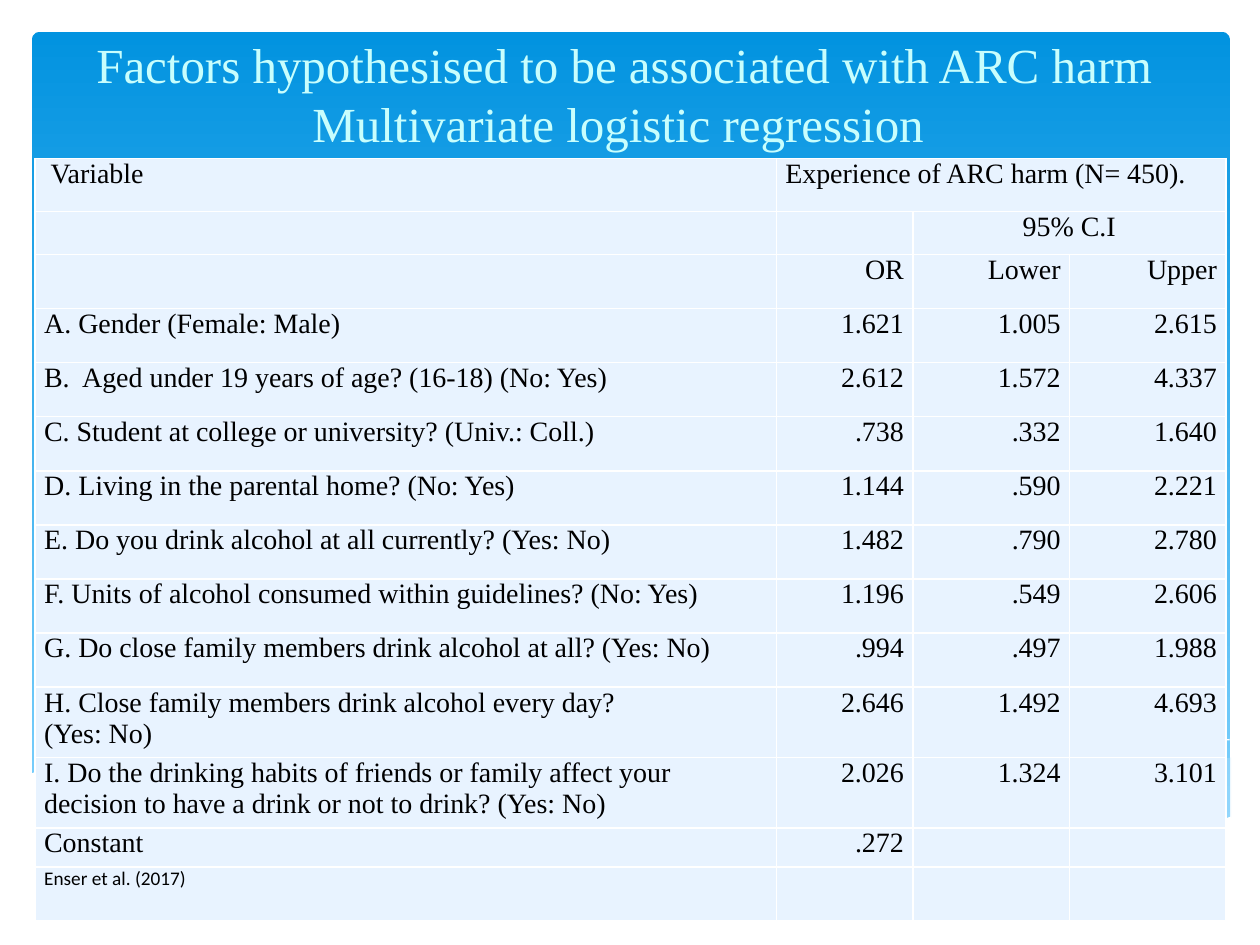
from lxml import etree
from pptx import Presentation
from pptx.dml.color import RGBColor
from pptx.enum.shapes import MSO_SHAPE
from pptx.enum.text import MSO_ANCHOR, PP_ALIGN
from pptx.oxml.ns import qn
from pptx.util import Cm, Pt

THEME = {
    "white": "FFFFFF", "black": "000000", "cell": "E8F3FF", "title": "C8FEFD",
    "top": "0293E0", "base": "83D3FE", "wave": "C6E7FC",
    "head": 28, "body": 16, "note": 11,
    "serif": "Times New Roman", "sans": "Calibri",
}

# Content
TITLE = ("Factors hypothesised to be associated with ARC harm "
         "Multivariate logistic regression ")
ROWS = [
    ("\u00a0Variable".replace("\u00a0", " "), "Experience of ARC harm (N= 450).", "", ""),
    ("", "", "95% C.I", ""),
    ("", "OR", "Lower", "Upper"),
    ("A. Gender (Female: Male)", "1.621", "1.005", "2.615"),
    ("B.  Aged under 19 years of age? (16-18) (No: Yes)", "2.612", "1.572", "4.337"),
    ("C. Student at college or university? (Univ.: Coll.)", ".738", ".332", "1.640"),
    ("D. Living in the parental home? (No: Yes)", "1.144", ".590", "2.221"),
    ("E. Do you drink alcohol at all currently? (Yes: No)", "1.482", ".790", "2.780"),
    ("F. Units of alcohol consumed within guidelines? (No: Yes)", "1.196", ".549", "2.606"),
    ("G. Do close family members drink alcohol at all? (Yes: No)", ".994", ".497", "1.988"),
    ("H. Close family members drink alcohol every day?\n(Yes: No)", "2.646", "1.492", "4.693"),
    ("I. Do the drinking habits of friends or family affect your decision "
     "to have a drink or not to drink? (Yes: No)", "2.026", "1.324", "3.101"),
    ("Constant", ".272", "", ""),
    ("Enser et al. (2017)", "", "", ""),
]
SPANS = [((0, 1), (0, 3)), ((1, 2), (1, 3))]
ALIGN = {(0, 1): PP_ALIGN.LEFT, (1, 2): PP_ALIGN.CENTER}

# Sizes in cm
WIDE = [14.94, 2.75, 3.16, 3.15]
TALL = [1.06, 0.87] + [1.09] * 8 + [1.42] * 2 + [0.79, 1.09]

# Waves: points in cm, fill, opacity in percent, closed
WAVES = [
    ([(24.82, 15.27), (23.77, 15.47), (22.66, 15.7), (21.89, 15.88), (20.47, 16.23),
      (19.15, 16.51), (17.96, 16.74), (16.81, 16.94), (18.26, 17.12), (19.56, 17.25),
      (20.7, 17.27), (21.95, 17.2), (23.04, 17.04), (23.98, 16.79), (24.82, 16.48)],
     "wave", 29, True),
    ([(22.71, 17.15), (21.29, 16.94), (19.71, 16.66), (17.96, 16.31), (16, 15.85),
      (14.48, 15.49), (13.08, 15.24), (11.81, 15.06), (10.67, 14.96), (9.65, 14.91),
      (8.76, 14.94), (7.29, 15.06), (8.71, 15.27), (10.29, 15.57), (11.43, 15.85),
      (13.46, 16.31), (15.29, 16.69), (16.92, 16.97), (18.36, 17.17), (19.66, 17.25),
      (21.06, 17.27), (22.05, 17.22)], "wave", 40, True),
    ([(7.87, 15.16), (8.74, 15.01), (9.86, 14.96), (11.46, 14.96), (12.98, 15.09),
      (14.78, 15.29), (16.92, 15.62), (19.33, 16.13), (21.13, 16.56), (23.06, 17.09)],
     None, 100, False),
    ([(15.6, 16.74), (17.09, 16.33), (19.02, 15.88), (20.5, 15.54), (22.02, 15.24),
      (23.5, 15.04), (24.79, 14.91)], None, 100, False),
    ([(0.58, 15.62), (0.91, 15.47), (1.5, 15.27), (2.41, 15.06), (3.35, 14.94),
      (4.5, 14.88), (5.84, 14.91), (7.42, 15.06), (9.27, 15.34), (11.35, 15.8),
      (14.1, 16.41), (16.46, 16.87), (18.42, 17.12), (20.14, 17.25), (21.59, 17.22),
      (22.83, 17.04), (23.88, 16.79), (24.82, 16.46), (24.82, 18.57), (0.58, 18.57)],
     "white", 100, True),
]


def tint(name):
    return RGBColor.from_string(THEME[name])


def put(obj, **vals):
    for key, val in vals.items():
        setattr(obj, key, val)


def style(run, size, face, ink):
    put(run.font, size=Pt(THEME[size]), name=THEME[face], bold=False)
    run.font.color.rgb = tint(ink)


def panel(slide):
    box = slide.shapes.add_shape(MSO_SHAPE.ROUNDED_RECTANGLE,
                                 Cm(0.64), Cm(0.64), Cm(24.16), Cm(16.76))
    box.adjustments[0] = 0.01
    box.shadow.inherit = False
    box.line.fill.background()
    box.fill.gradient()
    box.fill.gradient_angle = 270
    for stop, name, pos in zip(box.fill.gradient_stops, ("top", "base"), (0, 1)):
        stop.color.rgb = tint(name)
        stop.position = pos


def wave(slide, dots, name, alpha, shut):
    dots = [(Cm(x), Cm(y)) for x, y in dots]
    pen = slide.shapes.build_freeform(*dots[0])
    pen.add_line_segments(dots[1:], close=shut)
    shape = pen.convert_to_shape()
    shape.shadow.inherit = False
    if name is None:
        shape.fill.background()
        shape.line.color.rgb = tint("white")
        shape.line.width = Pt(0)
        return
    shape.line.fill.background()
    shape.fill.solid()
    shape.fill.fore_color.rgb = tint(name)
    if alpha < 100:
        clr = shape.element.spPr.find(".//" + qn("a:srgbClr"))
        etree.SubElement(clr, qn("a:alpha"), val=str(alpha * 1000))


def head(slide):
    title = slide.shapes.title
    put(title, left=Cm(0.89), top=Cm(1.12), width=Cm(23.39), height=Cm(2.08))
    slide.shapes.element.append(title.element)  # in front of the panel
    frame = title.text_frame
    put(frame, word_wrap=True, vertical_anchor=MSO_ANCHOR.BOTTOM)
    para = frame.paragraphs[0]
    para.alignment = PP_ALIGN.CENTER
    run = para.add_run()
    run.text = TITLE
    style(run, "head", "serif", "title")


def edge(cell):
    props = cell._tc.get_or_add_tcPr()
    for side in ("lnL", "lnR", "lnT", "lnB"):
        line = etree.SubElement(props, qn("a:" + side), w=str(Pt(1)))
        fill = etree.SubElement(line, qn("a:solidFill"))
        etree.SubElement(fill, qn("a:srgbClr"), val=THEME["white"])


def write(cell, text, align, size, face):
    put(cell, margin_left=Cm(0.18), margin_right=Cm(0.18), margin_top=0, margin_bottom=0)
    edge(cell)
    cell.fill.solid()
    cell.fill.fore_color.rgb = tint("cell")
    cell.text = text
    for para in cell.text_frame.paragraphs:
        para.alignment = align
        for run in para.runs:
            style(run, size, face, "black")
        if not text:
            etree.SubElement(para._p, qn("a:endParaRPr"), sz=str(THEME[size] * 100))


def grid(slide):
    table = slide.shapes.add_table(len(ROWS), len(WIDE), Cm(0.71), Cm(3.2),
                                   Cm(sum(WIDE)), Cm(sum(TALL))).table
    put(table, first_row=False, horz_banding=False)
    for col, wide in zip(table.columns, WIDE):
        col.width = Cm(wide)
    for row, tall in zip(table.rows, TALL):
        row.height = Cm(tall)
    for r, row in enumerate(ROWS):
        note = r == len(ROWS) - 1
        size, face = ("note", "sans") if note else ("body", "serif")
        for c, text in enumerate(row):
            side = PP_ALIGN.RIGHT if c else PP_ALIGN.LEFT
            write(table.cell(r, c), text, ALIGN.get((r, c), side), size, face)
    for start, end in SPANS:
        table.cell(*start).merge(table.cell(*end))


def main():
    deck = Presentation()
    put(deck, slide_width=Cm(25.4), slide_height=Cm(19.05))
    slide = deck.slides.add_slide(deck.slide_layouts[5])
    panel(slide)
    for item in WAVES:
        wave(slide, *item)
    head(slide)
    grid(slide)
    deck.save("out.pptx")


if __name__ == "__main__":
    main()
